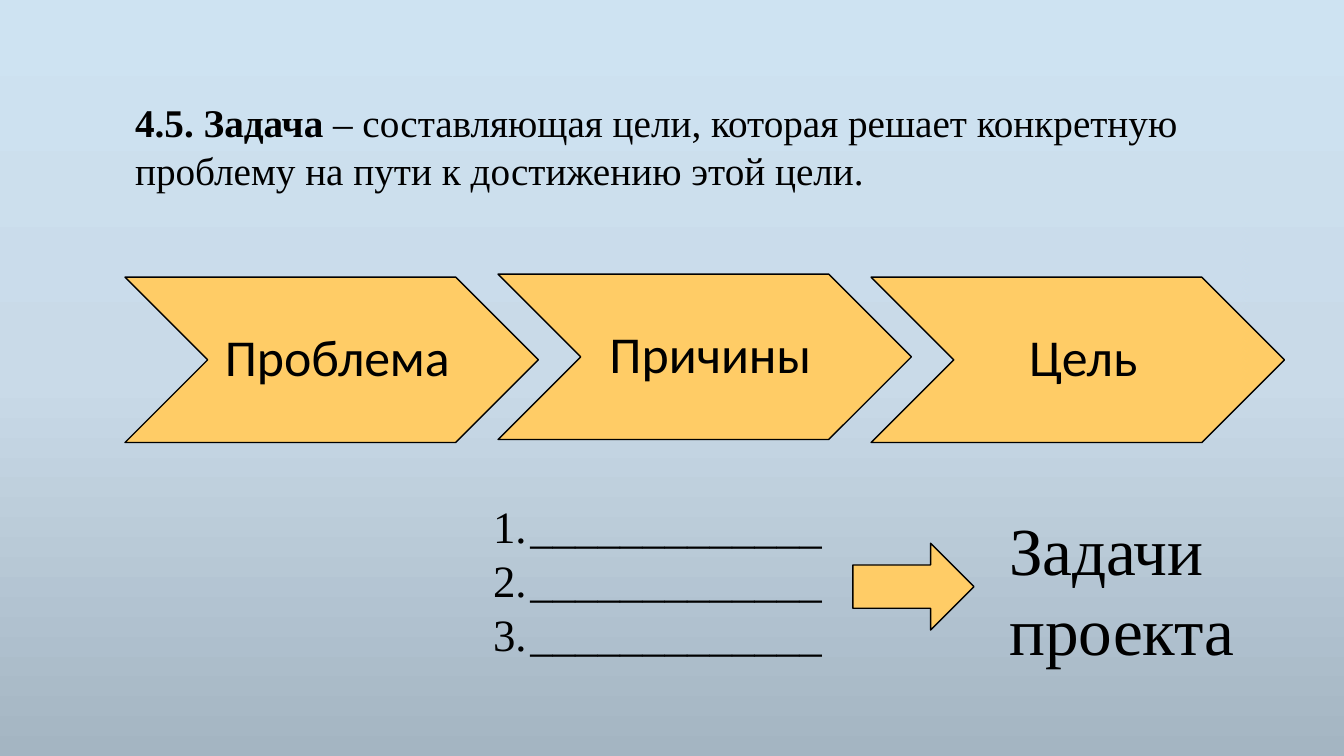
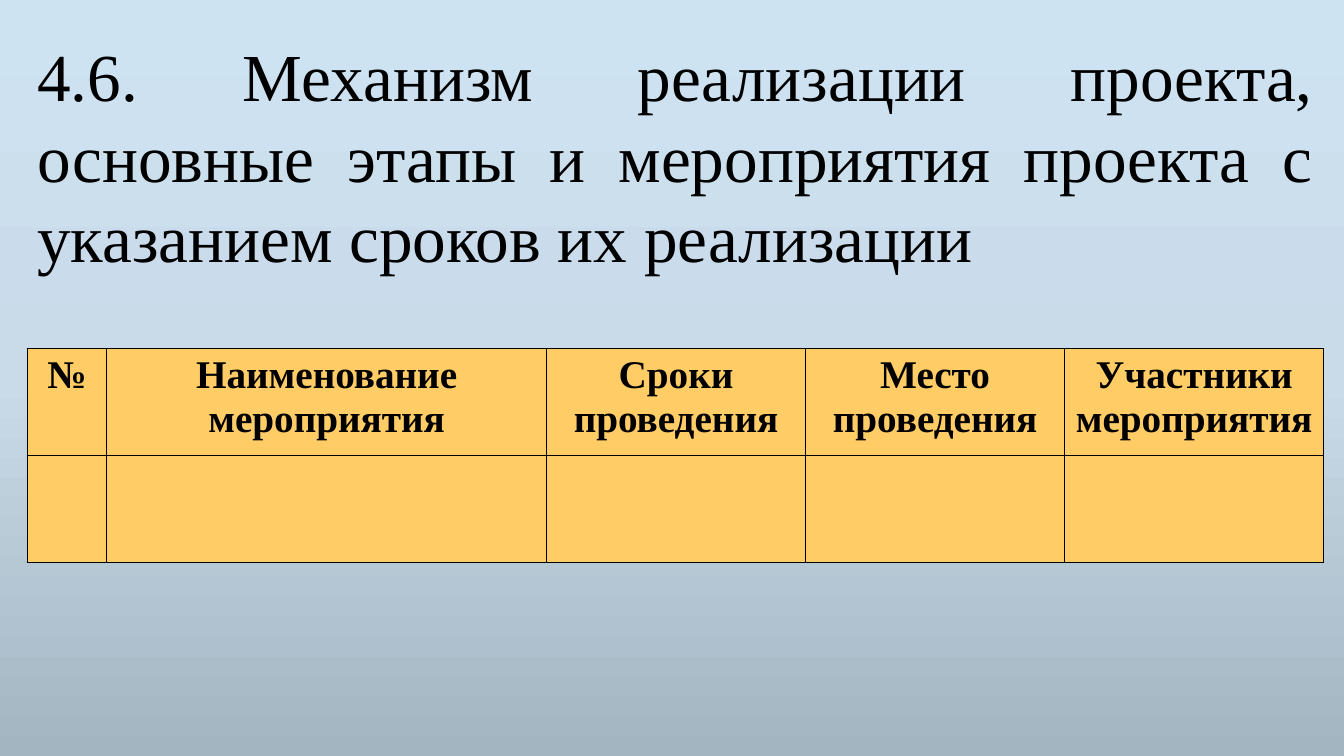
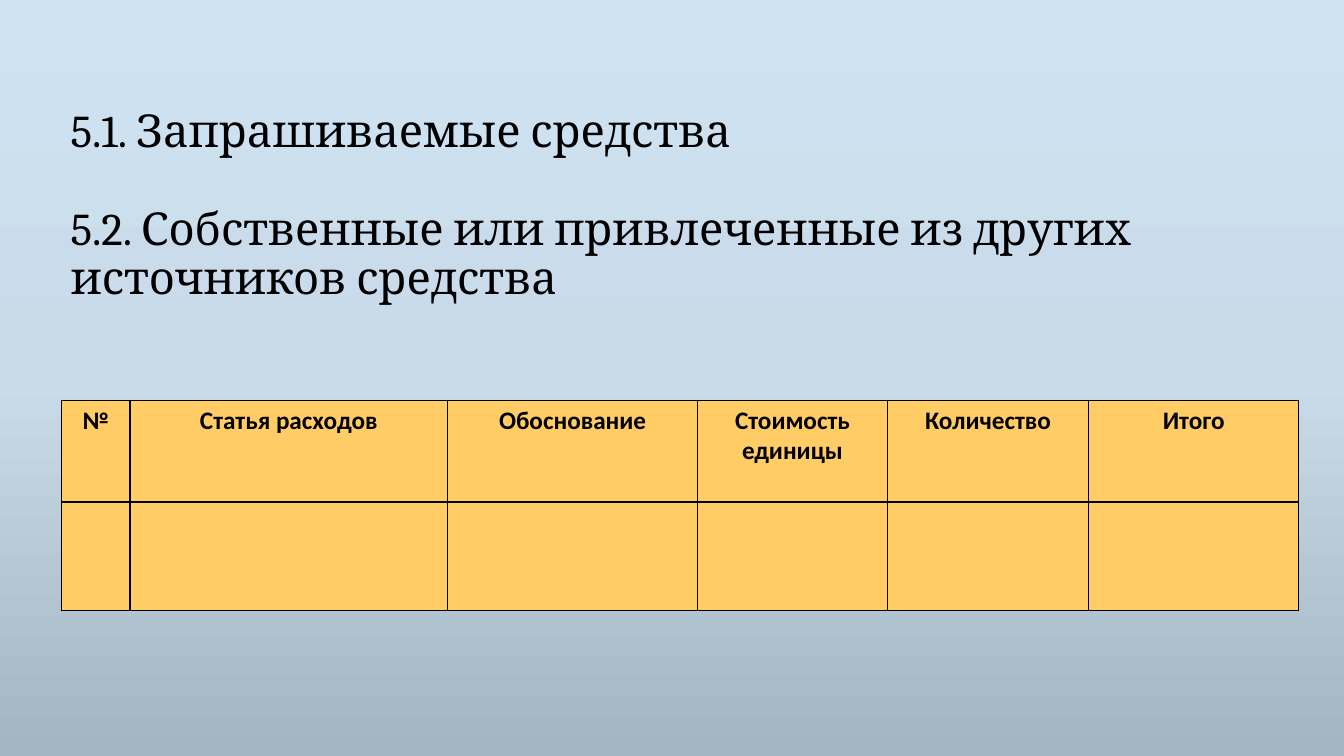
"""Builds three slides on project tasks, stages and funding."""
import copy

import lxml.etree
import pptx
import pptx.dml.color
import pptx.enum.shapes
import pptx.enum.text
import pptx.oxml.ns
import pptx.util

PX = 9144
BLACK = "000000"
AMBER = "FFCC66"
BACKGROUND = [(0, "CEE3F2"), (0.5, "C9DAE8"), (1, "A4B5C2")]
SERIF = "Times New Roman"
SANS = "Calibri"
ALIGN = pptx.enum.text.PP_ALIGN
ANCHOR = pptx.enum.text.MSO_ANCHOR
SHAPE = pptx.enum.shapes.MSO_SHAPE
qn = pptx.oxml.ns.qn


def rgb(value):
    return pptx.dml.color.RGBColor.from_string(value)


def px(*values):
    return [pptx.util.Emu(v * PX) for v in values]


def add_node(parent, tag, **attrs):
    return lxml.etree.SubElement(parent, qn(tag), attrs)


def write(tf, *paragraphs, size, font=SERIF, bold=False, align=ALIGN.LEFT,
          spacing=1.0, before=0):
    for i, runs in enumerate(paragraphs):
        p = tf.add_paragraph() if i else tf.paragraphs[0]
        p.alignment = align
        p.line_spacing = spacing
        p.space_before = pptx.util.Pt(before if i else 0)
        if isinstance(runs, str):
            runs = [(runs, bold)]
        for text, is_bold in runs:
            r = p.add_run()
            r.text = text
            r.font.size = pptx.util.Pt(size)
            r.font.name = font
            r.font.bold = is_bold
            r.font.color.rgb = rgb(BLACK)


def set_background(master):
    fill = master.background.fill
    fill.gradient()
    fill.gradient_angle = 270
    stops = master.element.find(".//" + qn("a:gsLst"))
    stops.append(copy.deepcopy(stops[0]))
    for stop, (position, color) in zip(fill.gradient_stops, BACKGROUND):
        stop.position = position
        stop.color.rgb = rgb(color)


def fill_placeholder(sp, box, *paragraphs, anchor=ANCHOR.TOP, **fmt):
    sp.left, sp.top, sp.width, sp.height = px(*box)
    tf = sp.text_frame
    tf.word_wrap = True
    tf.auto_size = pptx.enum.text.MSO_AUTO_SIZE.NONE
    tf.vertical_anchor = anchor
    write(tf, *paragraphs, **fmt)


def number_list(tf, indent):
    for p in tf.paragraphs:
        pPr = p._p.get_or_add_pPr()
        pPr.set("marL", str(indent * PX))
        pPr.set("indent", str(-indent * PX))
        add_node(pPr, "a:buFont", typeface=SERIF)
        add_node(pPr, "a:buAutoNum", type="arabicPeriod")


def add_text(slide, box, *paragraphs, **fmt):
    tf = slide.shapes.add_textbox(*px(*box)).text_frame
    tf.word_wrap = True
    write(tf, *paragraphs, **fmt)


def add_figure(slide, kind, box):
    sp = slide.shapes.add_shape(kind, *px(*box))
    sp.shadow.inherit = False
    sp.fill.solid()
    sp.fill.fore_color.rgb = rgb(AMBER)
    sp.line.color.rgb = rgb(BLACK)
    sp.line.width = pptx.util.Pt(1)
    return sp


def add_chevron(slide, x, y, label):
    tf = add_figure(slide, SHAPE.CHEVRON, (x, y, 410, 164)).text_frame
    tf.word_wrap = False
    tf.vertical_anchor = ANCHOR.MIDDLE
    tf.margin_left, tf.margin_top, tf.margin_right, tf.margin_bottom = px(16, 5, 5, 5)
    write(tf, label, size=37, font=SANS, align=ALIGN.CENTER, spacing=0.9)


def style_cell(cell):
    tcPr = cell._tc.get_or_add_tcPr()
    for side in ("a:lnL", "a:lnR", "a:lnT", "a:lnB"):
        ln = add_node(tcPr, side, w=str(pptx.util.Pt(1)))
        add_node(add_node(ln, "a:solidFill"), "a:srgbClr", val=BLACK)
    cell.fill.solid()
    cell.fill.fore_color.rgb = rgb(AMBER)


def add_form(slide, x, y, columns, heights, **fmt):
    """Adds a table of (heading, width) columns with blank rows below the headings."""
    widths = [width for _, width in columns]
    table = slide.shapes.add_table(
        len(heights), len(columns), *px(x, y, sum(widths), sum(heights))).table
    table.first_row = table.horz_banding = False
    for row, height in zip(table.rows, px(*heights)):
        row.height = height
    for column, width in zip(table.columns, px(*widths)):
        column.width = width
    for cell in table.iter_cells():
        style_cell(cell)
    for i, (heading, _) in enumerate(columns):
        write(table.cell(0, i).text_frame, heading, bold=True, align=ALIGN.CENTER, **fmt)


def build_task(prs):
    slide = prs.slides.add_slide(prs.slide_layouts[1])
    title, body = slide.placeholders
    fill_placeholder(title, (124, 93, 1170, 104), [
        ("4.5. Задача ", True),
        ("– составляющая цели, которая решает конкретную проблему "
         "на пути к достижению этой цели.", False)], size=28)
    steps = [("Проблема", 275), ("Причины", 272), ("Цель", 275)]
    for i, (label, y) in enumerate(steps):
        add_chevron(slide, 124 + i * 370, y, label)
    fill_placeholder(body, (479, 490, 352, 172), *["_" * 13] * 3, size=32)
    number_list(body.text_frame, 37)
    add_figure(slide, SHAPE.RIGHT_ARROW, (846, 539, 120, 86))
    add_text(slide, (991, 499, 258, 172), "Задачи", "проекта", size=48)


def build_stages(prs):
    slide = prs.slides.add_slide(prs.slide_layouts[5])
    fill_placeholder(
        slide.shapes.title, (27, 29, 1286, 252),
        "4.6. Механизм реализации проекта, основные этапы и мероприятия "
        "проекта с указанием сроков их реализации",
        size=48, align=ALIGN.JUSTIFY)
    columns = [("№", 79), ("Наименование мероприятия", 436), ("Сроки проведения", 257),
               ("Место проведения", 257), ("Участники мероприятия", 257)]
    add_form(slide, 27, 346, columns, [106, 106], size=28)


def build_funding(prs):
    slide = prs.slides.add_slide(prs.slide_layouts[5])
    fill_placeholder(
        slide.shapes.title, (60, 100, 1228, 210),
        "5.1. Запрашиваемые средства",
        "5.2. Собственные или привлеченные из других источников средства",
        size=32.4, font="Cambria", spacing=0.9, before=35, anchor=ANCHOR.MIDDLE)
    columns = [("№", 68), ("Статья расходов", 315), ("Обоснование", 248),
               ("Стоимость единицы", 188), ("Количество", 200), ("Итого", 208)]
    add_form(slide, 61, 397, columns, [101, 108], size=18, font=SANS)


def main():
    prs = pptx.Presentation()
    prs.slide_width, prs.slide_height = px(1333, 750)
    set_background(prs.slide_master)
    build_task(prs)
    build_stages(prs)
    build_funding(prs)
    prs.save("out.pptx")


if __name__ == "__main__":
    main()
